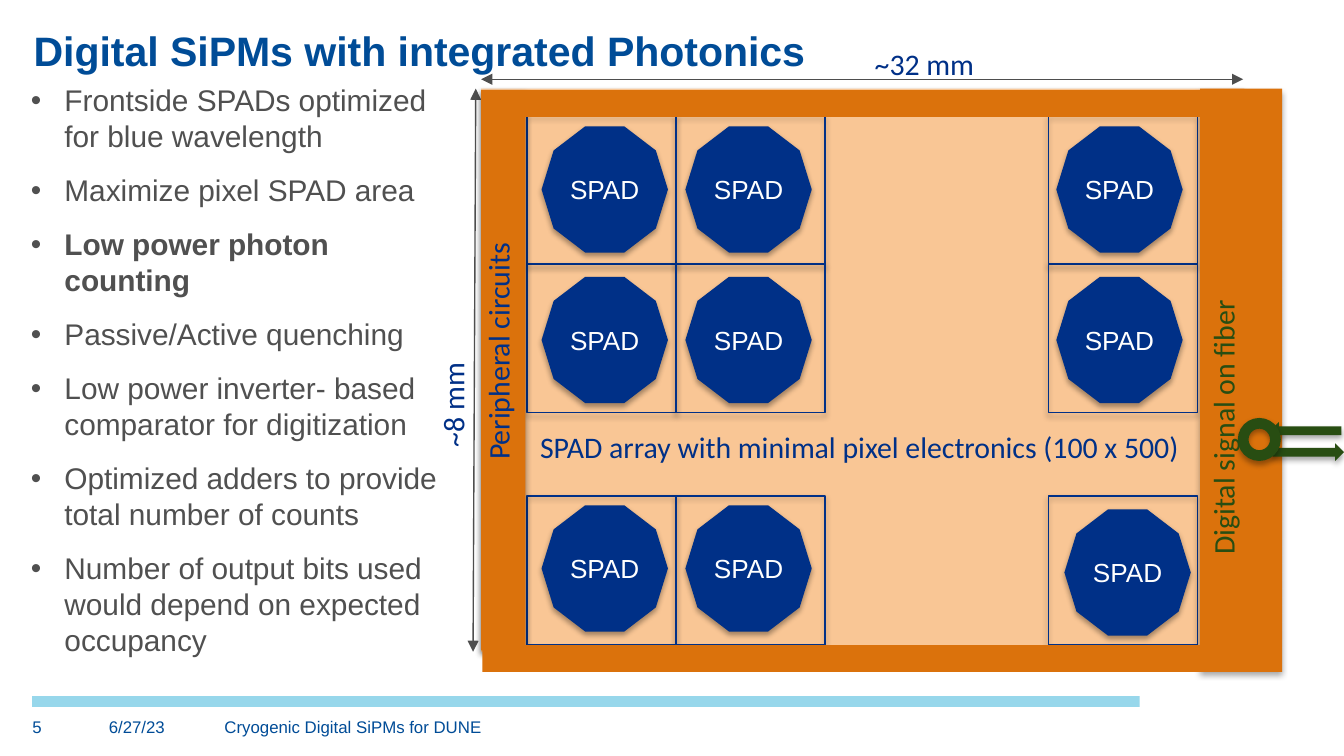
from dataclasses import dataclass
from typing import NamedTuple

from lxml import etree
from pptx import Presentation
from pptx.dml.color import RGBColor
from pptx.enum.shapes import MSO_CONNECTOR, MSO_SHAPE
from pptx.enum.text import MSO_ANCHOR, MSO_AUTO_SIZE, PP_ALIGN
from pptx.oxml.ns import qn
from pptx.util import Emu, Inches, Pt

RECTANGLE, DECAGON = MSO_SHAPE.RECTANGLE, MSO_SHAPE.DECAGON
RIGHT_ARROW, DONUT = MSO_SHAPE.RIGHT_ARROW, MSO_SHAPE.DONUT
STRAIGHT = MSO_CONNECTOR.STRAIGHT
LEFT, CENTER = PP_ALIGN.LEFT, PP_ALIGN.CENTER
TOP, MIDDLE, BOTTOM = MSO_ANCHOR.TOP, MSO_ANCHOR.MIDDLE, MSO_ANCHOR.BOTTOM
NO_FIT, GROW = MSO_AUTO_SIZE.NONE, MSO_AUTO_SIZE.SHAPE_TO_FIT_TEXT


@dataclass(frozen=True)
class Theme:
    heading: str = "004C97"
    body: str = "505050"
    navy: str = "003087"
    white: str = "FFFFFF"
    array: str = "F9C695"
    periphery: str = "DB720C"
    fiber: str = "284D12"
    dimension: str = "4E4E4E"
    rule: str = "97D7EB"
    sans: str = "Arial"
    label: str = "Calibri"
    title_size: float = 22
    text_size: float = 16
    spad_size: float = 14
    footer_size: float = 9
    line_width: float = 0.75


class Box(NamedTuple):
    left: float
    top: float
    width: float
    height: float


class Track(NamedTuple):
    """Start of a pixel cell and of its SPAD along one axis."""
    cell: float
    spad: float


class Label(NamedTuple):
    text: str
    box: Box
    color: str
    rotation: float = 0
    wrap: bool = False


THEME = Theme()
CELL_SIZE, SPAD_SIZE = 1.11, 0.94
COLUMNS = [Track(3.92, 4.03), Track(5.03, 5.1), Track(7.8, 7.86)]
ROWS = [Track(0.86, 0.94), Track(1.96, 2.06), Track(3.69, 3.76)]
LAST_SPAD = (7.92, 3.79)

POINTS = [
    "Frontside SPADs optimized for blue wavelength",
    "Maximize pixel SPAD area",
    "Low power photon counting",
    "Passive/Active quenching",
    "Low power inverter- based comparator for digitization",
    "Optimized adders to provide total number of counts",
    "Number of output bits used would depend on expected occupancy",
]
KEY_POINT = POINTS[2]

FOOTER = [
    ("6/27/23", Box(0.81, 5.33, 0.74, 0.2)),
    ("Cryogenic Digital SiPMs for DUNE", Box(1.67, 5.33, 6.85, 0.2)),
    ("5", Box(0.24, 5.33, 0.45, 0.19)),
]

HEIGHT_LABEL = Label("~8 mm", Box(2.95, 2.82, 0.84, 0.37), THEME.navy, 270)
WIDTH_LABEL = Label("~32 mm", Box(6.41, 0.29, 0.95, 0.37), THEME.navy)
ARRAY_LABEL = Label("SPAD array with minimal pixel electronics (100 x 500)",
                    Box(3.92, 3.14, 4.99, 0.37), THEME.navy, wrap=True)
CIRCUITS_LABEL = Label("Peripheral circuits", Box(2.79, 2.42, 1.83, 0.37), THEME.navy, 270)
FIBER_LABEL = Label("Digital signal on fiber", Box(7.96, 2.9, 2.28, 0.37),
                    THEME.fiber, 270, True)


def place(box: Box) -> list[Emu]:
    return [Inches(length) for length in box]


def write(frame, text: str, *, size: float, color: str, font: str = THEME.sans,
          bold: bool = False, align=LEFT, anchor=TOP, wrap: bool = True,
          fit=NO_FIT, inset: float | None = None, bullet: bool = False,
          append: bool = False) -> None:
    """Put one formatted paragraph into a frame, or append it after the others."""
    frame.word_wrap, frame.auto_size, frame.vertical_anchor = wrap, fit, anchor
    if inset is not None:
        frame.margin_left = frame.margin_right = Inches(inset)
        frame.margin_top = frame.margin_bottom = Inches(inset)
    paragraph = frame.add_paragraph() if append else frame.paragraphs[0]
    paragraph.alignment = align
    if append:
        paragraph.space_before = Pt(9.8)
    if bullet:
        properties = paragraph._p.get_or_add_pPr()
        properties.set("marL", str(Inches(0.25)))
        properties.set("indent", str(Inches(-0.25)))
        etree.SubElement(properties, qn("a:buFont"), typeface=THEME.sans)
        etree.SubElement(properties, qn("a:buChar"), char="•")
    run = paragraph.add_run()
    run.text = text
    run.font.name, run.font.size, run.font.bold = font, Pt(size), bold
    run.font.color.rgb = RGBColor.from_string(color)


def add_shadow(shape) -> None:
    effects = shape.element.spPr.find(qn("a:effectLst"))
    shadow = etree.SubElement(effects, qn("a:outerShdw"), blurRad=str(Pt(3.1)),
                              dist=str(Pt(1.8)), dir="5400000", rotWithShape="0")
    black = etree.SubElement(shadow, qn("a:srgbClr"), val="000000")
    etree.SubElement(black, qn("a:alpha"), val="35000")


def draw_shape(slide, kind, box: Box, *, fill: str | None = None, line: str | None = None,
               shadow: bool = True, rotation: float = 0):
    shape = slide.shapes.add_shape(kind, *place(box))
    shape.rotation = rotation
    shape.shadow.inherit = False
    if fill:
        shape.fill.solid()
        shape.fill.fore_color.rgb = RGBColor.from_string(fill)
    else:
        shape.fill.background()
    if line:
        shape.line.color.rgb = RGBColor.from_string(line)
        shape.line.width = Pt(THEME.line_width)
    else:
        shape.line.fill.background()
    if shadow:
        add_shadow(shape)
    return shape


def draw_spad(slide, left: float, top: float) -> None:
    spad = draw_shape(slide, DECAGON, Box(left, top, SPAD_SIZE, SPAD_SIZE), fill=THEME.navy)
    write(spad.text_frame, "SPAD", size=THEME.spad_size, color=THEME.white,
          align=CENTER, anchor=MIDDLE)


def draw_label(slide, label: Label) -> None:
    holder = slide.shapes.add_textbox(*place(label.box))
    holder.rotation = label.rotation
    write(holder.text_frame, label.text, size=THEME.text_size, color=label.color,
          font=THEME.label, wrap=label.wrap, fit=GROW)


def draw_dimension(slide, *ends: float) -> None:
    """Draw a line with an arrowhead at both ends, given as x1, y1, x2, y2."""
    dimension = slide.shapes.add_connector(STRAIGHT, *[Inches(end) for end in ends])
    dimension.line.color.rgb = RGBColor.from_string(THEME.dimension)
    dimension.line.width = Pt(THEME.line_width)
    properties = dimension.element.spPr
    for end in ("a:headEnd", "a:tailEnd"):
        etree.SubElement(properties.find(qn("a:ln")), qn(end), type="triangle")
    etree.SubElement(properties, qn("a:effectLst"))


def draw_text(slide) -> None:
    title = slide.shapes.title
    title.left, title.top, title.width, title.height = place(Box(0.25, 0.21, 9.5, 0.35))
    write(title.text_frame, "Digital SiPMs with integrated Photonics", size=THEME.title_size,
          color=THEME.heading, bold=True, anchor=BOTTOM, inset=0)
    points = slide.shapes.add_textbox(*place(Box(0.23, 0.61, 3.06, 4.49))).text_frame
    for index, point in enumerate(POINTS):
        write(points, point, size=THEME.text_size, color=THEME.body, inset=0,
              bold=point == KEY_POINT, bullet=True, append=index > 0)
    for text, box in FOOTER:
        write(slide.shapes.add_textbox(*place(box)).text_frame, text,
              size=THEME.footer_size, color=THEME.heading, inset=0)


def draw_chip(slide) -> None:
    draw_label(slide, HEIGHT_LABEL)
    draw_shape(slide, RECTANGLE, Box(3.58, 0.66, 5.68, 4.19), fill=THEME.array)
    pixels = [(column, row) for row in ROWS for column in COLUMNS]
    for column, row in pixels[:-1]:
        draw_spad(slide, column.spad, row.spad)
    draw_spad(slide, *LAST_SPAD)
    draw_dimension(slide, 3.54, 0.66, 3.52, 4.85)
    draw_dimension(slide, 3.58, 0.59, 9.25, 0.59)
    draw_label(slide, WIDTH_LABEL)
    draw_label(slide, ARRAY_LABEL)
    for column, row in pixels:
        draw_shape(slide, RECTANGLE, Box(column.cell, row.cell, CELL_SIZE, CELL_SIZE),
                   line=THEME.navy)
    for side in (Box(3.58, 0.67, 0.33, 4.17), Box(8.93, 0.66, 0.61, 4.34)):
        draw_shape(slide, RECTANGLE, side, fill=THEME.periphery)
    draw_label(slide, CIRCUITS_LABEL)
    for left, top in ((3.58, 0.67), (3.59, 4.8)):
        draw_shape(slide, RECTANGLE, Box(left, top, 5.66, 0.2),
                   fill=THEME.periphery, shadow=False)


def draw_fiber(slide) -> None:
    draw_shape(slide, RIGHT_ARROW, Box(9.47, 3.3, 0.53, 0.13), fill=THEME.fiber)
    draw_shape(slide, RIGHT_ARROW, Box(9.45, 3.14, 0.53, 0.13), fill=THEME.fiber, rotation=180)
    draw_shape(slide, DONUT, Box(9.21, 3.11, 0.32, 0.32), fill=THEME.fiber)
    draw_label(slide, FIBER_LABEL)


def main() -> None:
    deck = Presentation()
    deck.slide_width = Inches(10)
    deck.slide_height = deck.slide_width * 9 // 16
    slide = deck.slides.add_slide(deck.slide_layouts[5])
    draw_shape(slide, RECTANGLE, Box(0.24, 5.18, 8.24, 0.08), fill=THEME.rule, shadow=False)
    draw_text(slide)
    draw_chip(slide)
    draw_fiber(slide)
    deck.save("out.pptx")


if __name__ == "__main__":
    main()
